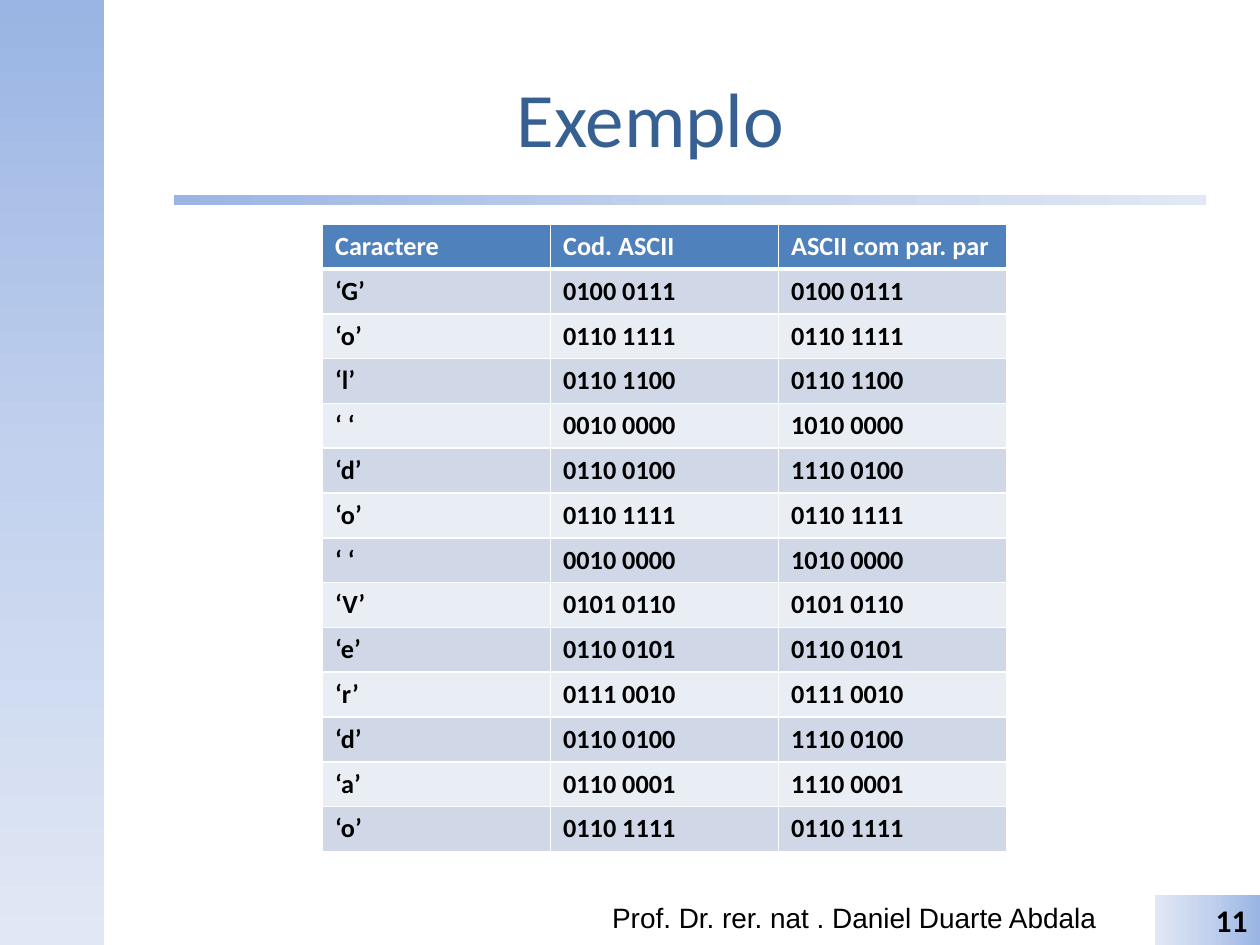
from dataclasses import dataclass

import pptx
import pptx.dml.color
import pptx.enum.shapes
import pptx.enum.text
import pptx.oxml
import pptx.oxml.ns
import pptx.util

Pt = pptx.util.Pt
RGBColor = pptx.dml.color.RGBColor
Shape = pptx.enum.shapes.MSO_SHAPE
Align = pptx.enum.text.PP_ALIGN
Anchor = pptx.enum.text.MSO_ANCHOR
qn = pptx.oxml.ns.qn

WHITE = RGBColor(0xFF, 0xFF, 0xFF)
BLACK = RGBColor(0x00, 0x00, 0x00)
TITLE_BLUE = RGBColor(0x37, 0x60, 0x92)
HEADER_BLUE = RGBColor(0x4F, 0x81, 0xBD)
BAND_DARK = RGBColor(0xD0, 0xD8, 0xE8)
BAND_LIGHT = RGBColor(0xE9, 0xED, 0xF4)
GRADIENT_STOPS = (
    (0, RGBColor(0x9A, 0xB5, 0xE4)),
    (50, RGBColor(0xC2, 0xD1, 0xED)),
    (100, RGBColor(0xE1, 0xE8, 0xF5)),
)

MESSAGE = "Gol do Verdao"
HEADINGS = ("Caractere", "Cod. ASCII", "ASCII com par. par")
COLUMN_WIDTH = 130.32
ROW_HEIGHT = 25.6


@dataclass(frozen=True)
class Frame:
    left: float
    top: float
    width: float
    height: float

    def lengths(self) -> tuple:
        return Pt(self.left), Pt(self.top), Pt(self.width), Pt(self.height)


@dataclass(frozen=True)
class TextStyle:
    size: float
    color: RGBColor = BLACK
    font: str = "Calibri"
    bold: bool = False
    align: Align = Align.LEFT


@dataclass(frozen=True)
class Band:
    frame: Frame
    angle: int  # counter-clockwise degrees
    kind: Shape = Shape.RECTANGLE


SIDE_BAND = Band(Frame(0, 0, 59.76, 540), 270)
TITLE_RULE = Band(Frame(99.36, 111.6, 589.68, 5.76), 0, Shape.ROUNDED_RECTANGLE)
NUMBER_BAND = Band(Frame(660.24, 511.2, 59.76, 28.8), 180)


def write(text_frame, text: str, style: TextStyle) -> None:
    para = text_frame.paragraphs[0]
    para.alignment = style.align
    span = para.add_run()
    span.text = text
    span.font.name = style.font
    span.font.size = Pt(style.size)
    span.font.bold = style.bold
    span.font.color.rgb = style.color


def add_band(page, band: Band):
    shape = page.shapes.add_shape(band.kind, *band.frame.lengths())
    shape.shadow.inherit = False
    shape.line.fill.background()
    if band.kind == Shape.ROUNDED_RECTANGLE:
        shape.adjustments[0] = 0
    shape.fill.gradient()
    shape.fill.gradient_angle = band.angle
    stops = shape._element.spPr.find(qn("a:gradFill")).find(qn("a:gsLst"))
    for stop in list(stops):
        stops.remove(stop)
    for percent, color in GRADIENT_STOPS:
        stops.append(pptx.oxml.parse_xml(
            f'<a:gs {pptx.oxml.ns.nsdecls("a")} pos="{percent * 1000}">'
            f'<a:srgbClr val="{color}"/></a:gs>'))
    return shape


def set_borders(cell, top: float, bottom: float) -> None:
    """Draw white borders; they must precede the fill in the cell properties."""
    properties = cell._tc.get_or_add_tcPr()
    sides = (("L", 1), ("R", 1), ("T", top), ("B", bottom))
    for index, (side, width) in enumerate(sides):
        properties.insert(index, pptx.oxml.parse_xml(
            f'<a:ln{side} {pptx.oxml.ns.nsdecls("a")} w="{Pt(width)}">'
            f'<a:solidFill><a:srgbClr val="{WHITE}"/></a:solidFill></a:ln{side}>'))


def bits(code: int) -> str:
    return f"{code >> 4:04b} {code & 15:04b}"


def character_row(character: str) -> tuple[str, str, str]:
    """Give the character, its ASCII code and the code with an even parity bit."""
    code = ord(character)
    parity = bin(code).count("1") % 2
    closing = "‘" if character == " " else "’"
    return f"‘{character}{closing}", bits(code), bits(code | parity << 7)


def add_code_table(page) -> None:
    rows = [HEADINGS, *map(character_row, MESSAGE)]
    frame = Frame(184.32, 128.16, COLUMN_WIDTH * len(HEADINGS), ROW_HEIGHT * len(rows))
    table = page.shapes.add_table(len(rows), len(HEADINGS), *frame.lengths()).table
    for column in table.columns:
        column.width = Pt(COLUMN_WIDTH)
    for index, values in enumerate(rows):
        table.rows[index].height = Pt(ROW_HEIGHT)
        is_header = index == 0
        fill = HEADER_BLUE if is_header else BAND_DARK if index % 2 else BAND_LIGHT
        style = TextStyle(15, WHITE if is_header else BLACK, bold=True)
        for cell, value in zip(table.rows[index].cells, values):
            cell.fill.solid()
            cell.fill.fore_color.rgb = fill
            set_borders(cell, top=3 if index == 1 else 1, bottom=3 if is_header else 1)
            write(cell.text_frame, value, style)


def add_title(page) -> None:
    title = page.shapes.title
    title.left, title.top, title.width, title.height = Frame(59.76, 21.6, 624.24, 90).lengths()
    title.text_frame.vertical_anchor = Anchor.MIDDLE
    write(title.text_frame, "Exemplo", TextStyle(44, TITLE_BLUE, align=Align.CENTER))


def add_footer(page) -> None:
    box = page.shapes.add_textbox(*Frame(342.72, 511.2, 301.68, 28.8).lengths())
    box.text_frame.word_wrap = True
    write(box.text_frame, "Prof. Dr. rer. nat . Daniel Duarte Abdala",
          TextStyle(16, font="Arial"))
    number = add_band(page, NUMBER_BAND)
    number.text_frame.vertical_anchor = Anchor.MIDDLE
    write(number.text_frame, "11", TextStyle(18, bold=True, align=Align.RIGHT))


def main() -> None:
    deck = pptx.Presentation()
    deck.slide_width, deck.slide_height = Pt(720), Pt(540)
    page = deck.slides.add_slide(deck.slide_layouts.get_by_name("Title Only"))
    add_band(page, SIDE_BAND)
    add_band(page, TITLE_RULE)
    add_title(page)
    add_code_table(page)
    add_footer(page)
    deck.save("out.pptx")


if __name__ == "__main__":
    main()
